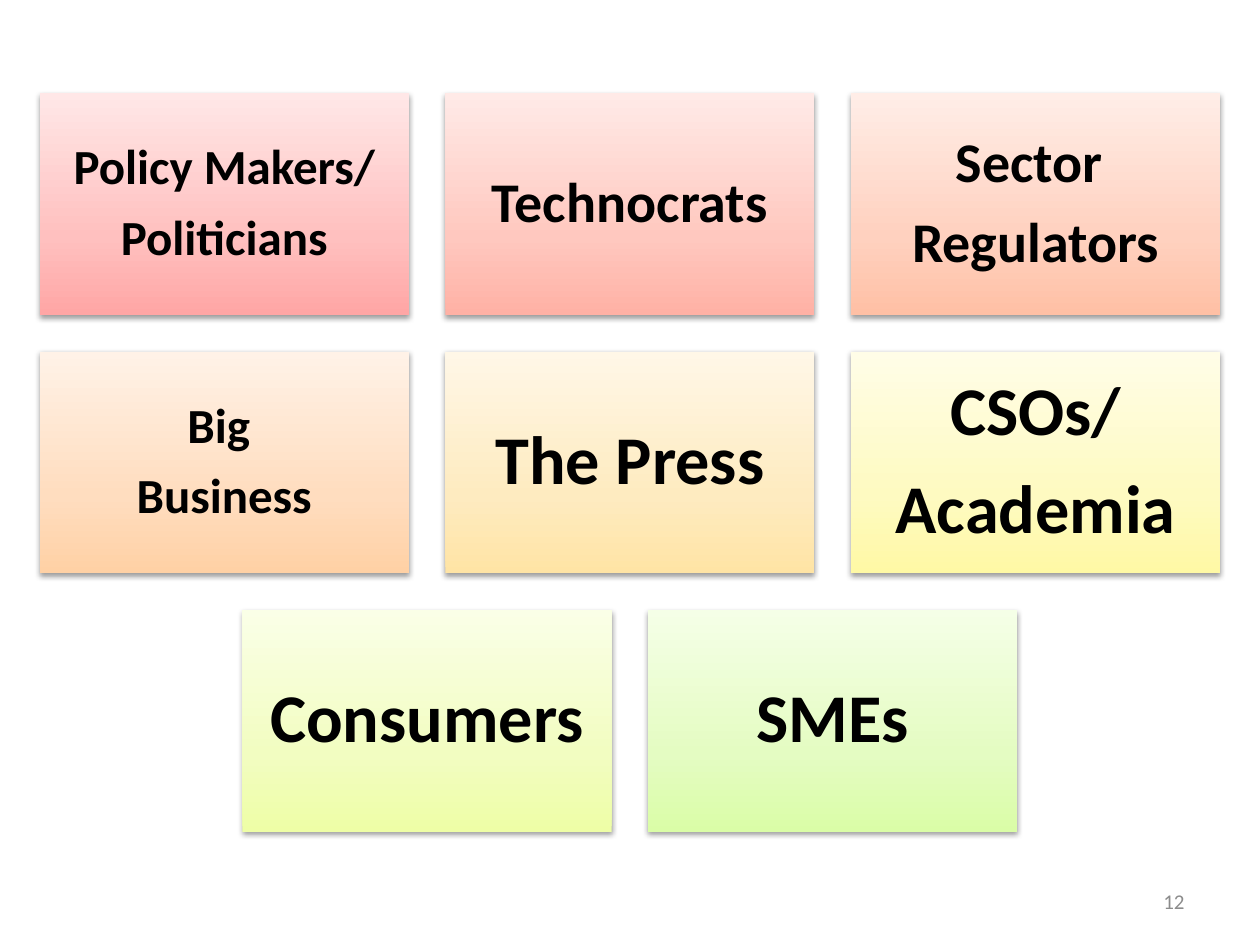
from copy import deepcopy

from lxml import etree
from pptx import Presentation
from pptx.dml.color import RGBColor
from pptx.enum.shapes import MSO_SHAPE
from pptx.enum.text import MSO_ANCHOR, PP_ALIGN
from pptx.oxml.ns import qn
from pptx.util import Inches, Pt

RECTANGLE = MSO_SHAPE.RECTANGLE
MIDDLE = MSO_ANCHOR.MIDDLE
CENTER, RIGHT = PP_ALIGN.CENTER, PP_ALIGN.RIGHT

SLIDE_WIDTH, SLIDE_HEIGHT = 10, 7.5
CARD_WIDTH, CARD_HEIGHT, GAP = 2.93, 1.76, 0.29
FIRST_TOP = 0.74
SHADOW = (
    '<a:outerShdw xmlns:a="http://schemas.openxmlformats.org/drawingml/2006/main"'
    ' blurRad="39370" dist="20320" dir="5400000" rotWithShape="0">'
    '<a:srgbClr val="000000"><a:alpha val="38000"/></a:srgbClr></a:outerShdw>'
)

# Each card: lines, text size, inset, gradient from bottom to top
ROWS = [
    [
        (["Policy Makers/", "Politicians"], 28, 0.12, ["FFA6A5", "FFC0BF", "FFE7E7"]),
        (["Technocrats"], 32, 0.13, ["FFB1A5", "FFC8BF", "FFEAE7"]),
        (["Sector ", "Regulators"], 32, 0.13, ["FFC0A5", "FFD1BF", "FFEDE7"]),
    ],
    [
        (["Big ", "Business"], 28, 0.12, ["FFD1A5", "FFDDBF", "FFF2E7"]),
        (["The Press"], 39, 0.16, ["FFE4A5", "FEEBC0", "FFF7E7"]),
        (["CSOs/", "Academia"], 39, 0.16, ["FFF9A5", "FEFAC1", "FFFDE7"]),
    ],
    [
        (["Consumers"], 39, 0.16, ["EEFEA6", "F2FDC1", "FAFFE7"]),
        (["SMEs"], 39, 0.16, ["DAFDA7", "E4FCC2", "F5FFE7"]),
    ],
]


def color(hex_code):
    return RGBColor.from_string(hex_code)


def write_text(box, lines, size, hex_code="000000", bold=False, align=CENTER,
               inset=0.1, line_spacing=1.0, space_after=0):
    frame = box.text_frame
    frame.word_wrap = True
    frame.vertical_anchor = MIDDLE
    frame.margin_left = frame.margin_right = Inches(inset)
    frame.margin_top = frame.margin_bottom = Inches(inset)
    frame.text = "\n".join(lines)
    for para in frame.paragraphs:
        para.alignment = align
        para.line_spacing = line_spacing
        para.space_after = Pt(space_after)
        for span in para.runs:
            span.font.name = "Calibri"
            span.font.size = Pt(size)
            span.font.bold = bold
            span.font.color.rgb = color(hex_code)


deck = Presentation()
deck.slide_width = Inches(SLIDE_WIDTH)
deck.slide_height = Inches(SLIDE_HEIGHT)
page = deck.slides.add_slide(deck.slide_layouts[6])

# Stakeholder cards, each row centred on the page
for row_index, row in enumerate(ROWS):
    row_width = len(row) * (CARD_WIDTH + GAP) - GAP
    row_left = (SLIDE_WIDTH - row_width) / 2
    top = FIRST_TOP + row_index * (CARD_HEIGHT + GAP)
    for column, (lines, size, inset, shades) in enumerate(row):
        left = row_left + column * (CARD_WIDTH + GAP)
        card = page.shapes.add_shape(RECTANGLE, Inches(left), Inches(top),
                                     Inches(CARD_WIDTH), Inches(CARD_HEIGHT))
        card.line.fill.background()

        # Three-stop gradient running upwards
        card.fill.gradient()
        card.fill.gradient_angle = 90
        stop_list = card._element.spPr.find(".//" + qn("a:gsLst"))
        stop_list.append(deepcopy(stop_list[-1]))
        for stop, position, shade in zip(card.fill.gradient_stops, (0, 0.35, 1), shades):
            stop.position = position
            stop.color.rgb = color(shade)

        # Soft shadow below the card
        card.shadow.inherit = False
        effects = card._element.spPr.find(qn("a:effectLst"))
        effects.append(etree.fromstring(SHADOW))

        write_text(card, lines, size, bold=True, inset=inset,
                   line_spacing=0.9, space_after=0.35 * size)

# Page number
number = page.shapes.add_textbox(Inches(7.17), Inches(6.95), Inches(2.33), Inches(0.4))
write_text(number, ["12"], 12, hex_code="8C8C8C", align=RIGHT)

deck.save("out.pptx")
